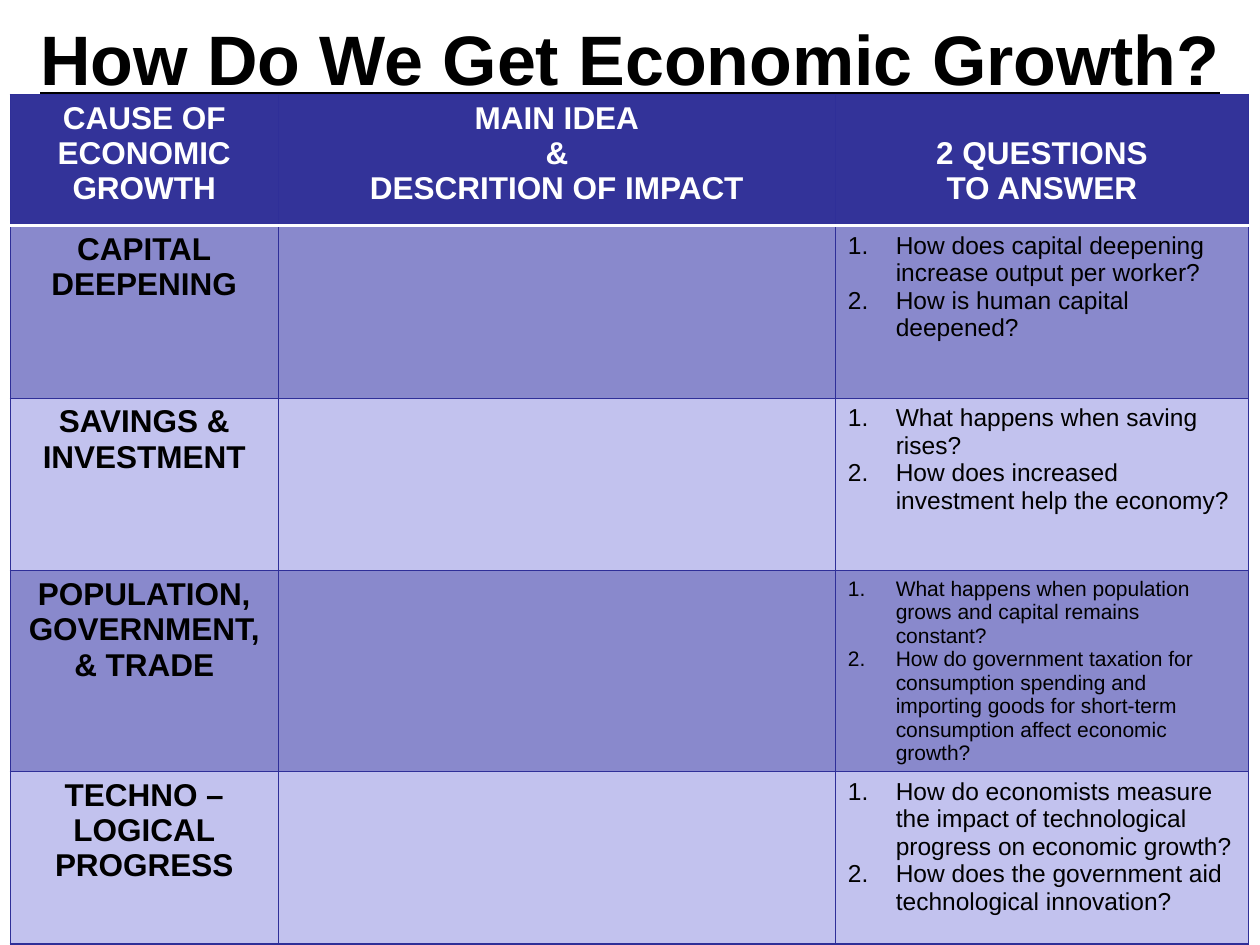
from dataclasses import dataclass

from lxml import etree
from pptx import Presentation
from pptx.dml.color import RGBColor
from pptx.enum import text
from pptx.oxml import ns
from pptx.util import Inches, Pt


@dataclass(frozen=True)
class Theme:
    font: str = "Arial"
    ink: str = "000000"
    white: str = "FFFFFF"
    head: str = "333399"
    line: str = "2F2F98"
    bands: tuple = ("8989CC", "C2C2EE")
    title: int = 40
    label: int = 18
    body: int = 14
    small: int = 12
    thin: float = 0.75
    thick: float = 2


HEADS = [
    ["CAUSE OF ECONOMIC GROWTH"],
    ["MAIN IDEA", "&", "DESCRITION OF IMPACT"],
    ["2 QUESTIONS", "TO ANSWER"],
]
CAUSES = [
    (["CAPITAL", "DEEPENING"],
     ["How does capital deepening increase output per worker?",
      "How is human capital deepened?"]),
    (["SAVINGS &", "INVESTMENT"],
     ["What happens when saving rises?",
      "How does increased investment help the economy?"]),
    (["POPULATION,", "GOVERNMENT,", "& TRADE"],
     ["What happens when population grows and capital remains constant?",
      "How do government taxation for consumption spending and importing "
      "goods for short-term consumption affect economic growth?"]),
    (["TECHNO –LOGICAL", "PROGRESS"],
     ["How do economists measure the impact of technological progress "
      "on economic growth?",
      "How does the government aid technological innovation?"]),
]
COLS = [2.13, 4.42, 3.28]
ROWS = [1.04] + [1.37] * len(CAUSES)


class Deck:
    def __init__(self, theme):
        self.theme = theme
        self.prs = Presentation()
        self.prs.slide_width, self.prs.slide_height = Inches(10), Inches(7.5)
        self.slide = self.prs.slides.add_slide(self.prs.slide_layouts[5])

    def style(self, para, size, color, bold=True):
        font = para.font
        font.name, font.size, font.bold = self.theme.font, Pt(size), bold
        font.color.rgb = RGBColor.from_string(color)

    def title(self, words, left, top, width, height):
        box = self.slide.shapes.title
        box.left, box.top = Inches(left), Inches(top)
        box.width, box.height = Inches(width), Inches(height)
        frame = box.text_frame
        frame.text = words
        frame.auto_size = text.MSO_AUTO_SIZE.NONE
        frame.vertical_anchor = text.MSO_ANCHOR.MIDDLE
        para = frame.paragraphs[0]
        para.alignment = text.PP_ALIGN.CENTER
        self.style(para, self.theme.title, self.theme.ink)
        para.font.underline = True

    def grid(self, left, top, cols, rows):
        frame = self.slide.shapes.add_table(
            len(rows), len(cols), Inches(left), Inches(top),
            Inches(sum(cols)), Inches(sum(rows)))
        table = frame.table
        for col, width in zip(table.columns, cols):
            col.width = Inches(width)
        for row, height in zip(table.rows, rows):
            row.height = Inches(height)
        return table

    def border(self, cell, side, color, width):
        props = cell._tc.get_or_add_tcPr()
        line = etree.SubElement(props, ns.qn(f"a:ln{side}"), w=str(Pt(width)))
        fill = etree.SubElement(line, ns.qn("a:solidFill"))
        etree.SubElement(fill, ns.qn("a:srgbClr"), val=color)

    def paint(self, cell, row):
        # White rule under the header, thin rules elsewhere
        theme = self.theme
        for side in "LRTB":
            rule = (row, side) in ((0, "B"), (1, "T"))
            self.border(cell, side, theme.white if rule else theme.line,
                        theme.thick if rule else theme.thin)
        cell.fill.solid()
        color = theme.bands[(row - 1) % 2] if row else theme.head
        cell.fill.fore_color.rgb = RGBColor.from_string(color)

    def label(self, cell, lines, color):
        cell.text = "\n".join(lines)
        for para in cell.text_frame.paragraphs:
            para.alignment = text.PP_ALIGN.CENTER
            self.style(para, self.theme.label, color)

    def quiz(self, cell, lines, size):
        cell.text = "\n".join(lines)
        for para in cell.text_frame.paragraphs:
            props = para._p.get_or_add_pPr()
            props.set("marL", str(Inches(0.38)))
            props.set("indent", str(-Inches(0.38)))
            etree.SubElement(props, ns.qn("a:buFont"), typeface="+mj-lt")
            etree.SubElement(props, ns.qn("a:buAutoNum"), type="arabicPeriod")
            self.style(para, size, self.theme.ink, bold=False)


def main():
    theme = Theme()
    deck = Deck(theme)

    # Title
    deck.title("How Do We Get Economic Growth?", 0, 0, 10, 0.92)

    # Table base
    table = deck.grid(0.08, 0.75, COLS, ROWS)
    for row in range(len(ROWS)):
        for col in range(len(COLS)):
            deck.paint(table.cell(row, col), row)

    # Header row; the last heading sits one line lower
    for col, lines in enumerate(HEADS):
        deck.label(table.cell(0, col), lines, theme.white)
    table.cell(0, 2).margin_top = Inches(0.33)

    # Causes and their questions; long questions take the small size
    for row, (cause, asks) in enumerate(CAUSES, 1):
        deck.label(table.cell(row, 0), cause, theme.ink)
        size = theme.small if len("".join(asks)) > 150 else theme.body
        deck.quiz(table.cell(row, 2), asks, size)

    deck.prs.save("out.pptx")


if __name__ == "__main__":
    main()
